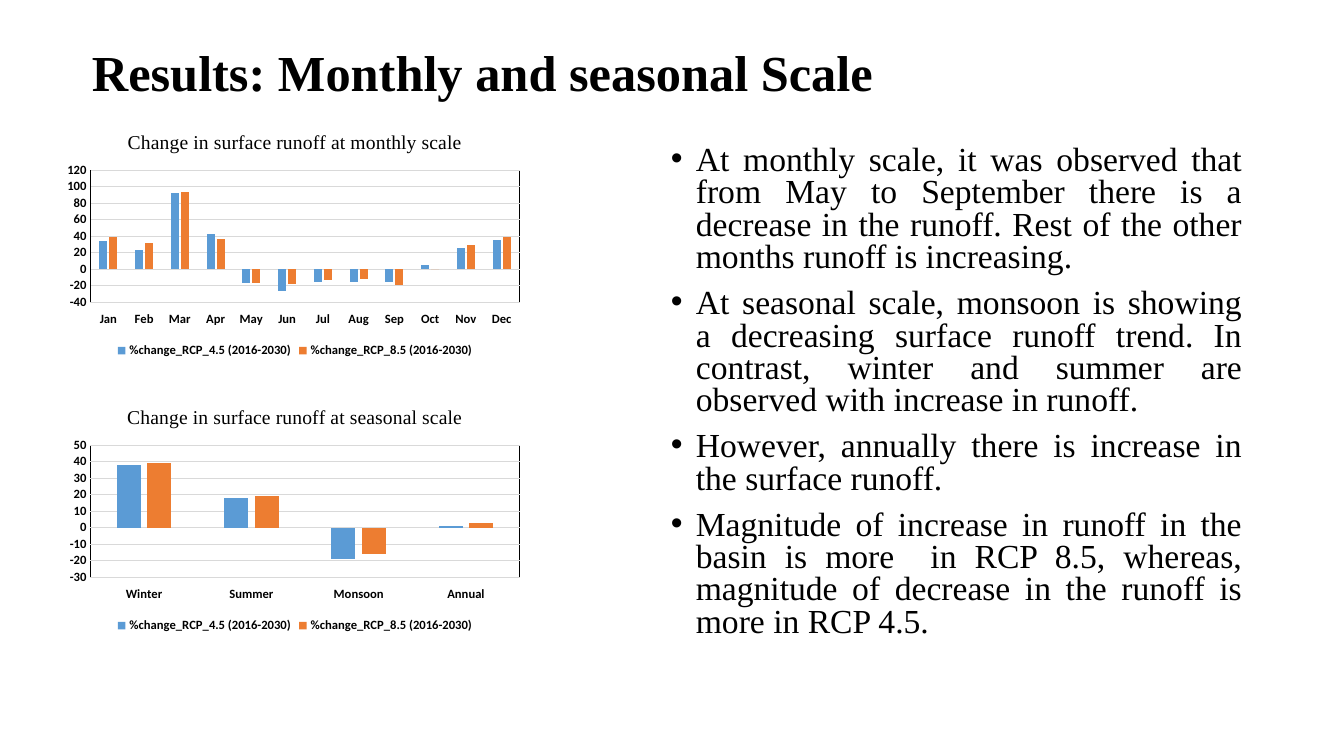
import pptx
import pptx.chart.data
import pptx.dml.color
import pptx.enum.chart
import pptx.enum.text
import pptx.oxml
import pptx.oxml.ns
import pptx.util

SCALE = 914400 / 100.8
SERIF = "Times New Roman"
SANS = "Calibri"
BLACK = "000000"
GRAY = "D9D9D9"
HUES = ["5B9BD5", "ED7D31"]
NAMES = ["%change_RCP_4.5 (2016-2030)", "%change_RCP_8.5 (2016-2030)"]
MONTHS = ["Jan", "Feb", "Mar", "Apr", "May", "Jun",
          "Jul", "Aug", "Sep", "Oct", "Nov", "Dec"]
MONTHLY = [[34, 23, 92, 42, -17, -27, -16, -16, -16, 5, 26, 35],
           [39, 32, 94, 36, -17, -18, -13, -12, -19, 0, 29, 39]]
SEASONS = ["Winter", "Summer", "Monsoon", "Annual"]
SEASONAL = [[38, 18, -19, 1], [39, 19, -16, 3]]
POINTS = [
    "At monthly scale, it was observed that from May to September there is a "
    "decrease in the runoff. Rest of the other months runoff is increasing.",
    "At seasonal scale, monsoon is showing a decreasing surface runoff trend. "
    "In contrast, winter and summer are observed with increase in runoff. ",
    "However, annually there is increase in the surface runoff.",
    "Magnitude of increase in runoff in the basin is more  in RCP 8.5, whereas, "
    "magnitude of decrease in the runoff is more in RCP 4.5.",
]


def px(n):
    return pptx.util.Emu(round(n * SCALE))


def hue(code):
    return pptx.dml.color.RGBColor.from_string(code)


def style(font, size, face, bold=False):
    font.size = pptx.util.Pt(size)
    font.name = face
    font.bold = bold
    font.color.rgb = hue(BLACK)


def rule(line, code):
    line.color.rgb = hue(code)
    line.width = pptx.util.Pt(0.75)


def add_box(slide, left, top, width, height):
    frame = slide.shapes.add_textbox(*map(px, (left, top, width, height))).text_frame
    frame.word_wrap = True
    return frame


def add_title(slide, text):
    frame = add_box(slide, 82, 25, 1159, 101)
    frame.vertical_anchor = pptx.enum.text.MSO_ANCHOR.MIDDLE
    para = frame.paragraphs[0]
    para.text = text
    para.line_spacing = 0.9
    style(para.font, 36, SERIF, True)


def add_list(slide, items):
    frame = add_box(slide, 661, 141, 591, 504)
    for i, item in enumerate(items):
        para = frame.add_paragraph() if i else frame.paragraphs[0]
        para.text = item
        para.alignment = pptx.enum.text.PP_ALIGN.JUSTIFY
        para.line_spacing = 0.8
        para.space_before = pptx.util.Pt(10)
        style(para.font, 24, SERIF)
        props = para._p.get_or_add_pPr()
        props.set("marL", str(px(25)))
        props.set("indent", str(-px(25)))
        for tag, key, value in (("buFont", "typeface", "Arial"), ("buChar", "char", "•")):
            mark = pptx.oxml.parse_xml(
                f'<a:{tag} {pptx.oxml.ns.nsdecls("a")} {key}="{value}"/>')
            props.append(mark)


def set_plot(chart):
    area = chart._chartSpace.chart.plotArea
    for old in area.findall(pptx.oxml.ns.qn("c:layout")):
        area.remove(old)
    spots = "".join(f'<c:{tag} val="{val}"/>' for tag, val in (
        ("layoutTarget", "inner"), ("xMode", "edge"), ("yMode", "edge"),
        ("x", 0.063), ("y", 0.22), ("w", 0.917), ("h", 0.537)))
    space = pptx.oxml.ns.nsdecls("c", "a")
    area.insert(0, pptx.oxml.parse_xml(
        f"<c:layout {space}><c:manualLayout>{spots}</c:manualLayout></c:layout>"))
    area.append(pptx.oxml.parse_xml(
        f'<c:spPr {space}><a:noFill/><a:ln w="9525"><a:solidFill>'
        f'<a:srgbClr val="{BLACK}"/></a:solidFill></a:ln></c:spPr>'))


def add_bars(slide, top, title, cats, rows, low, high, step):
    kinds = pptx.enum.chart
    data = pptx.chart.data.CategoryChartData()
    data.categories = cats
    for name, row in zip(NAMES, rows):
        data.add_series(name, row)
    chart = slide.shapes.add_chart(
        kinds.XL_CHART_TYPE.COLUMN_CLUSTERED,
        px(61), px(top), px(468), px(246), data).chart
    style(chart.font, 10, SANS)
    chart.has_title = True
    head = chart.chart_title.text_frame.paragraphs[0]
    head.text = title
    style(head.font, 14, SERIF)
    chart.chart_title.include_in_layout = False

    plot = chart.plots[0]
    plot.gap_width = 219
    plot.overlap = -27
    plot.vary_by_categories = False
    for bars, code in zip(plot.series, HUES):
        bars.format.fill.solid()
        bars.format.fill.fore_color.rgb = hue(code)
        bars.invert_if_negative = False

    for axis in (chart.category_axis, chart.value_axis):
        axis.major_tick_mark = kinds.XL_TICK_MARK.NONE
        axis.minor_tick_mark = kinds.XL_TICK_MARK.NONE
        style(axis.tick_labels.font, 9, SANS, True)
    chart.category_axis.tick_label_position = kinds.XL_TICK_LABEL_POSITION.LOW
    rule(chart.category_axis.format.line, GRAY)
    scale = chart.value_axis
    scale.minimum_scale, scale.maximum_scale, scale.major_unit = low, high, step
    rule(scale.major_gridlines.format.line, GRAY)

    chart.has_legend = True
    chart.legend.position = kinds.XL_LEGEND_POSITION.BOTTOM
    chart.legend.include_in_layout = False
    style(chart.legend.font, 9, SANS, True)
    set_plot(chart)
    return chart


def main():
    deck = pptx.Presentation()
    deck.slide_width, deck.slide_height = px(1344), px(756)
    slide = deck.slides.add_slide(deck.slide_layouts[6])
    add_title(slide, "Results: Monthly and seasonal Scale")
    add_list(slide, POINTS)
    month = add_bars(slide, 116, "Change in surface runoff at monthly scale",
                     MONTHS, MONTHLY, -40, 120, 20)
    rule(month.value_axis.format.line, BLACK)
    season = add_bars(slide, 391, "Change in surface runoff at seasonal scale",
                      SEASONS, SEASONAL, -30, 50, 10)
    season.value_axis.format.line.fill.background()
    deck.save("out.pptx")


if __name__ == "__main__":
    main()
